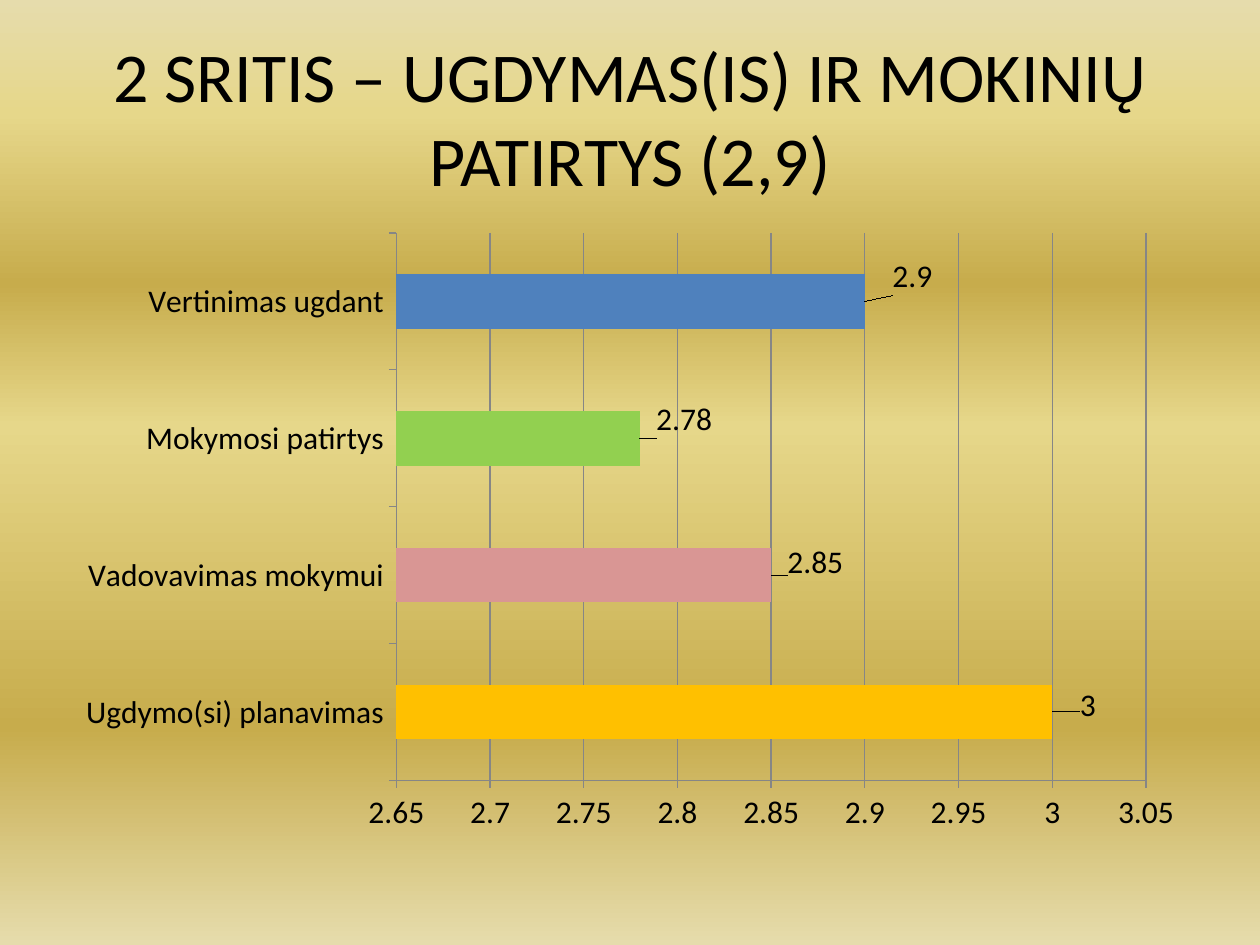
import pptx
import pptx.chart.data
import pptx.dml.color
import pptx.enum.chart
import pptx.enum.text
import pptx.oxml
import pptx.oxml.ns
import pptx.util
from pptx.util import Inches

RGBColor = pptx.dml.color.RGBColor
BLACK = RGBColor(0x00, 0x00, 0x00)
GRAY = RGBColor(0x86, 0x86, 0x86)
BLUE = RGBColor(0x4F, 0x81, 0xBD)
AMBER = RGBColor(0xFF, 0xC0, 0x00)
ROSE = RGBColor(0xD9, 0x96, 0x94)
GREEN = RGBColor(0x92, 0xD0, 0x50)
PALE = RGBColor(0xE6, 0xDC, 0xAC)
LIGHT_GOLD = RGBColor(0xE6, 0xD7, 0x8A)
DARK_GOLD = RGBColor(0xC7, 0xAC, 0x4C)

GOLD_STOPS = [(0, PALE), (12, LIGHT_GOLD), (30, DARK_GOLD),
              (45, LIGHT_GOLD), (77, DARK_GOLD), (100, PALE)]

# Area, score, bar colour, label shift as a share of the chart's width and height
AREAS = [
    ("Ugdymo(si) planavimas", 3, AMBER, (0.02, -0.01)),
    ("Vadovavimas mokymui", 2.85, ROSE, (0.01, -0.02)),
    ("Mokymosi patirtys", 2.78, GREEN, (0.01, -0.03)),
    ("Vertinimas ugdant", 2.9, BLUE, (0.02, -0.04)),
]


def write_text(frame, text, *, size, font="Calibri", color=BLACK,
               align=pptx.enum.text.PP_ALIGN.CENTER):
    paragraph = frame.paragraphs[0]
    paragraph.alignment = align
    run = paragraph.add_run()
    run.text = text
    run.font.size = pptx.util.Pt(size)
    run.font.name = font
    run.font.color.rgb = color


def manual_layout(**settings):
    """Return a c:layout element with the given settings in schema order."""
    items = "".join(f'<c:{tag} val="{value}"/>' for tag, value in settings.items())
    return pptx.oxml.parse_xml(
        f'<c:layout {pptx.oxml.ns.nsdecls("c")}>'
        f"<c:manualLayout>{items}</c:manualLayout></c:layout>")


class SlideBuilder:
    font = "Calibri"
    chart_size = pptx.util.Pt(18)

    def __init__(self, slide):
        self.slide = slide

    def background(self, stops):
        fill = self.slide.background.fill
        fill.gradient()
        fill.gradient_angle = 270
        stop_list = fill.gradient_stops[0]
        gradient = self.slide.background._cSld.find(
            ".//" + pptx.oxml.ns.qn("a:gsLst"))
        for stop in list(gradient):
            gradient.remove(stop)
        for percent, color in stops:
            gradient.append(pptx.oxml.parse_xml(
                f'<a:gs {pptx.oxml.ns.nsdecls("a")} pos="{percent * 1000}">'
                f'<a:srgbClr val="{color}"/></a:gs>'))

    def title(self, text, left, top, width, height):
        box = self.slide.shapes.add_textbox(left, top, width, height)
        box.text_frame.word_wrap = True
        box.text_frame.vertical_anchor = pptx.enum.text.MSO_ANCHOR.MIDDLE
        write_text(box.text_frame, text, size=40, font=self.font)

    def axis(self, axis):
        axis.major_tick_mark = pptx.enum.chart.XL_TICK_MARK.OUTSIDE
        axis.minor_tick_mark = pptx.enum.chart.XL_TICK_MARK.NONE
        axis.format.line.color.rgb = GRAY

    def bar_chart(self, areas, left, top, width, height):
        names, scores, colors, shifts = zip(*areas)
        scores_data = pptx.chart.data.CategoryChartData()
        scores_data.categories = names
        scores_data.add_series("Series 1", scores)
        chart = self.slide.shapes.add_chart(
            pptx.enum.chart.XL_CHART_TYPE.BAR_CLUSTERED,
            left, top, width, height, scores_data).chart
        chart.has_legend = chart.has_title = False
        chart.font.name = self.font
        chart.font.size = self.chart_size
        chart.font.color.rgb = BLACK

        # Axes
        self.axis(chart.category_axis)
        self.axis(chart.value_axis)
        score_axis = chart.value_axis
        score_axis.minimum_scale, score_axis.maximum_scale = 2.65, 3.05
        score_axis.major_unit = 0.05
        score_axis.has_major_gridlines = True
        score_axis.major_gridlines.format.line.color.rgb = GRAY

        # Bars and value labels
        plot = chart.plots[0]
        plot.gap_width = 150
        plot.vary_by_categories = False
        series = plot.series[0]
        series.invert_if_negative = False
        series.format.fill.solid()
        series.format.fill.fore_color.rgb = BLUE
        series.data_labels.show_value = True
        for index, color in enumerate(colors):
            point = series.points[index]
            if color != BLUE:
                point.format.fill.solid()
                point.format.fill.fore_color.rgb = color
            point.data_label.position = pptx.enum.chart.XL_LABEL_POSITION.OUTSIDE_END

        # Manual places for the labels and the plot area
        for label, (x, y) in zip(chart.element.xpath(".//c:dLbl"), shifts):
            label.insert(1, manual_layout(x=x, y=y))
        plot_area = chart.element.xpath(".//c:plotArea")[0]
        for layout in plot_area.xpath("./c:layout"):
            plot_area.remove(layout)
        plot_area.insert(0, manual_layout(
            layoutTarget="inner", xMode="edge", yMode="edge",
            x=0.294, y=0.02, w=0.661, h=0.878))


def main():
    deck = pptx.Presentation()
    deck.slide_width, deck.slide_height = Inches(10), Inches(7.5)
    builder = SlideBuilder(deck.slides.add_slide(deck.slide_layouts[6]))
    builder.background(GOLD_STOPS)
    builder.title("2 SRITIS – UGDYMAS(IS) IR MOKINIŲ PATIRTYS (2,9)",
                  Inches(0.5), Inches(0.3), Inches(9), Inches(1.25))
    builder.bar_chart(AREAS, Inches(0.5), Inches(1.75), Inches(9), Inches(4.95))
    deck.save("out.pptx")


if __name__ == "__main__":
    main()
